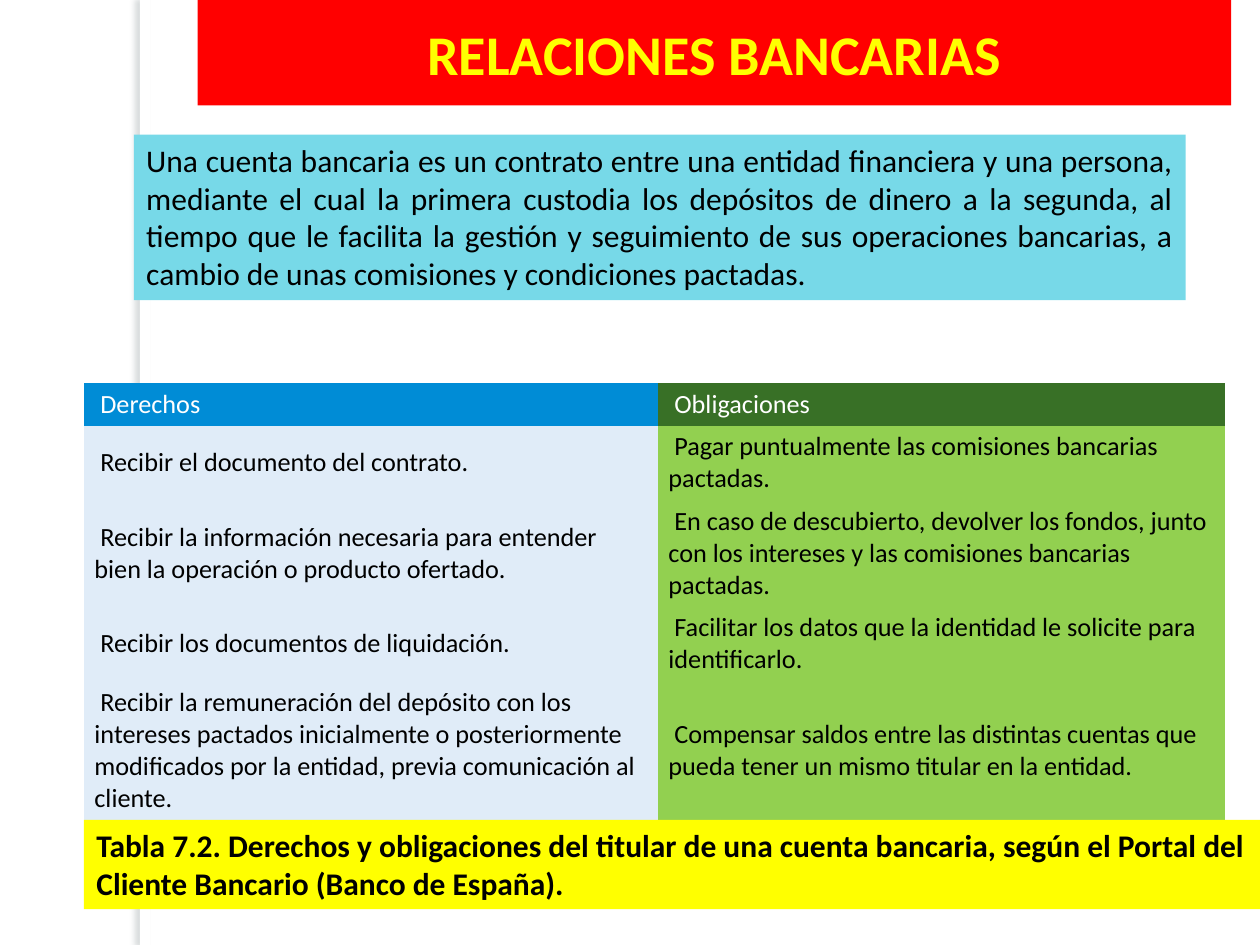
"""Build the slide on bank relations with its table of rights and duties."""
from dataclasses import dataclass

from lxml.etree import SubElement
from pptx import Presentation
from pptx.dml.color import RGBColor as Color
from pptx.enum.shapes import MSO_SHAPE as Shape
from pptx.enum.text import MSO_ANCHOR as Anchor, PP_ALIGN as Align
from pptx.oxml.ns import qn
from pptx.util import Pt


@dataclass(frozen=True)
class Theme:
    """Colours and type sizes of the slide."""
    font: str = "Calibri"
    title_size: float = 32
    body_size: float = 18
    table_size: float = 15
    black: str = "000000"
    white: str = "FFFFFF"
    red: str = "FF0000"
    yellow: str = "FFFF00"
    aqua: str = "77D9E8"
    shade: str = "6C7A7C"
    headers: tuple = ("008CD6", "387026")
    columns: tuple = ("E0ECF8", "92D050")


THEME = Theme()
NO_GRID_STYLE = "{2D5ABB26-0587-4C30-8999-92F81FD0307C}"
COLUMN_WIDTHS = (328, 324)
ROW_HEIGHTS = (24, 42, 60, 42, 78)
TITLE = "RELACIONES BANCARIAS"
DEFINITION = (
    "Una cuenta bancaria es un contrato entre una entidad financiera y una persona, "
    "mediante el cual la primera custodia los depósitos de dinero a la segunda, al tiempo "
    "que le facilita la gestión y seguimiento de sus operaciones bancarias, a cambio de "
    "unas comisiones y condiciones pactadas."
)
CAPTION = (
    "Tabla 7.2. Derechos y obligaciones del titular de una cuenta bancaria, según el "
    "Portal del Cliente Bancario (Banco de España)."
)
ROWS = (
    (" Derechos", " Obligaciones"),
    (" Recibir el documento del contrato.",
     " Pagar puntualmente las comisiones bancarias pactadas."),
    (" Recibir la información necesaria para entender bien la operación o producto ofertado.",
     " En caso de descubierto, devolver los fondos, junto con los intereses y las "
     "comisiones bancarias pactadas."),
    (" Recibir los documentos de liquidación.",
     " Facilitar los datos que la identidad le solicite para identificarlo."),
    (" Recibir la remuneración del depósito con los intereses pactados inicialmente o "
     "posteriormente modificados por la entidad, previa comunicación al cliente.",
     " Compensar saldos entre las distintas cuentas que pueda tener un mismo titular en "
     "la entidad."),
)


def apply_format(target, values):
    """Set each attribute of the target from a dict of format values."""
    for name, value in values.items():
        setattr(target, name, value)


def paint(target, color):
    """Give a shape or cell a solid fill."""
    target.fill.solid()
    target.fill.fore_color.rgb = Color.from_string(color)


def write_text(frame, text, color, size, bold=False, align=Align.LEFT):
    """Write one formatted paragraph into a text frame."""
    para = frame.paragraphs[0]
    para.alignment = align
    span = para.add_run()
    span.text = text
    apply_format(span.font, {"name": THEME.font, "size": Pt(size), "bold": bold})
    span.font.color.rgb = Color.from_string(color)


def add_panel(page, bounds, fill):
    """Add a filled rectangle without outline or shadow."""
    panel = page.shapes.add_shape(Shape.RECTANGLE, *map(Pt, bounds))
    panel.shadow.inherit = False
    paint(panel, fill)
    panel.line.fill.background()
    return panel


def add_text_panel(page, bounds, fill, text, anchor=Anchor.TOP, **style):
    """Add a filled rectangle that holds one paragraph."""
    box = add_panel(page, bounds, fill)
    apply_format(box.text_frame, {"word_wrap": True, "vertical_anchor": anchor})
    write_text(box.text_frame, text, **style)


def add_side_strip(page):
    """Add the white vertical strip with a soft shadow on its left."""
    strip = add_panel(page, (80, 0, 5.75, 540), THEME.white)
    effects = strip._element.spPr.find(qn("a:effectLst"))
    shadow = SubElement(effects, qn("a:outerShdw"), blurRad=str(Pt(3)),
                        dist=str(Pt(3)), dir="10800000", rotWithShape="0")
    shade = SubElement(shadow, qn("a:srgbClr"), val=THEME.shade)
    SubElement(shade, qn("a:alpha"), val="25000")


def add_rights_table(page):
    """Add the two-column table of rights and obligations."""
    bounds = (48, 219, sum(COLUMN_WIDTHS), sum(ROW_HEIGHTS))
    table = page.shapes.add_table(len(ROWS), len(COLUMN_WIDTHS), *map(Pt, bounds)).table
    table._tbl.tblPr.find(qn("a:tableStyleId")).text = NO_GRID_STYLE
    apply_format(table, {"first_row": False, "horz_banding": False})
    for column, width in zip(table.columns, COLUMN_WIDTHS):
        column.width = Pt(width)
    layout = {"vertical_anchor": Anchor.MIDDLE, "margin_left": Pt(6), "margin_right": Pt(6),
              "margin_top": Pt(2.9), "margin_bottom": Pt(2.9)}
    for row_index, texts in enumerate(ROWS):
        table.rows[row_index].height = Pt(ROW_HEIGHTS[row_index])
        fills, color = ((THEME.columns, THEME.black) if row_index
                        else (THEME.headers, THEME.white))
        for column_index, text in enumerate(texts):
            cell = table.cell(row_index, column_index)
            apply_format(cell, layout)
            paint(cell, fills[column_index])
            write_text(cell.text_frame, text, color, THEME.table_size)


def main():
    """Build and save the slide."""
    deck = Presentation()
    apply_format(deck, {"slide_width": Pt(720), "slide_height": Pt(540)})
    page = deck.slides.add_slide(deck.slide_layouts[6])
    add_side_strip(page)
    add_text_panel(page, (113, 0, 590.5, 60.25), THEME.red, TITLE, Anchor.MIDDLE,
                   color=THEME.yellow, size=THEME.title_size, bold=True, align=Align.CENTER)
    add_text_panel(page, (76.5, 77, 601, 94.5), THEME.aqua, DEFINITION,
                   color=THEME.black, size=THEME.body_size, align=Align.JUSTIFY)
    add_rights_table(page)
    add_text_panel(page, (48, 468.5, 672, 51), THEME.yellow, CAPTION,
                   color=THEME.black, size=THEME.body_size, bold=True)
    deck.save("out.pptx")


if __name__ == "__main__":
    main()
